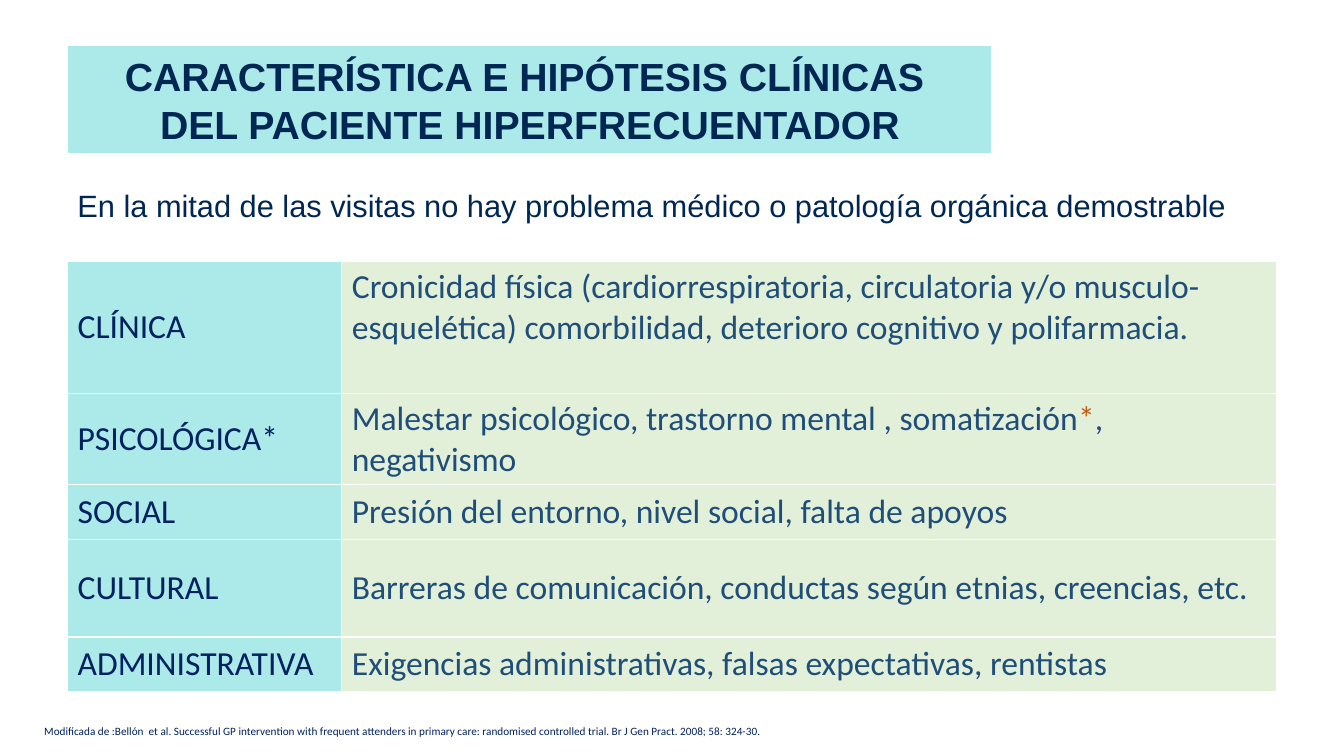
"""Build the slide on clinical traits of frequent attenders."""
from lxml import etree
from pptx import Presentation
from pptx.dml.color import RGBColor
from pptx.enum.shapes import MSO_SHAPE
from pptx.enum.text import MSO_ANCHOR, PP_ALIGN
from pptx.oxml.ns import qn
from pptx.util import Inches, Pt

RECT = MSO_SHAPE.RECTANGLE
TOP, MIDDLE = MSO_ANCHOR.TOP, MSO_ANCHOR.MIDDLE
LEFT, CENTER = PP_ALIGN.LEFT, PP_ALIGN.CENTER
INK, NAVY, BLUE, RUST = "002754", "002060", "1F4E79", "C55A11"
AQUA, GREEN, WHITE = "ACEAEA", "E2F0D9", "FFFFFF"

COLS = [2.72, 9.27]
ROWS = [
    (1.31, "CLÍNICA", ["Cronicidad física (cardiorrespiratoria, circulatoria y/o "
                       "musculo-esquelética) comorbilidad, deterioro cognitivo y polifarmacia."]),
    (0.91, "PSICOLÓGICA*", ["Malestar psicológico, trastorno mental , somatización",
                            "*", ", negativismo"]),
    (0.54, "SOCIAL", ["Presión del entorno, nivel social, falta de apoyos"]),
    (0.97, "CULTURAL", ["Barreras de comunicación, conductas según etnias, creencias, etc."]),
    (0.54, "ADMINISTRATIVA", ["Exigencias administrativas, falsas expectativas, rentistas"]),
]


def color(code):
    return RGBColor.from_string(code)


class Page:
    def __init__(self, slide):
        self.slide = slide
        self.head, self.body = "Arial", "Calibri"

    def style(self, run, font, size, ink, bold=False):
        run.font.name, run.font.size, run.font.bold = font, Pt(size), bold
        run.font.color.rgb = color(ink)

    def fill_in(self, frame, text, font, size, ink, bold=False, align=LEFT):
        frame.word_wrap = True
        frame.vertical_anchor = MIDDLE
        frame.text = text
        for para in frame.paragraphs:
            para.alignment = align
            for run in para.runs:
                self.style(run, font, size, ink, bold)

    def text(self, box, text, font, size, ink):
        frame = self.slide.shapes.add_textbox(*map(Inches, box)).text_frame
        self.fill_in(frame, text, font, size, ink)
        return frame

    def banner(self, box, text):
        shape = self.slide.shapes.add_shape(RECT, *map(Inches, box))
        shape.shadow.inherit = False
        shape.fill.solid()
        shape.fill.fore_color.rgb = color(AQUA)
        shape.line.color.rgb = color(WHITE)
        shape.line.width = Pt(1)
        self.fill_in(shape.text_frame, text, self.head, 28, INK, True, CENTER)

    def cell(self, cell, parts, ink, fill, anchor=MIDDLE):
        cell.vertical_anchor = anchor
        para = cell.text_frame.paragraphs[0]
        for part in parts:
            run = para.add_run()
            run.text = part
            self.style(run, self.body, 24, RUST if part == "*" else ink)
        props = cell._tc.get_or_add_tcPr()
        for side in ("a:lnL", "a:lnR", "a:lnT", "a:lnB"):
            line = etree.SubElement(props, qn(side), w=str(Pt(1)))
            solid = etree.SubElement(line, qn("a:solidFill"))
            etree.SubElement(solid, qn("a:srgbClr"), val=WHITE)
        cell.fill.solid()
        cell.fill.fore_color.rgb = color(fill)

    def table(self, left, top, cols, rows):
        high = sum(row[0] for row in rows)
        box = map(Inches, (left, top, sum(cols), high))
        table = self.slide.shapes.add_table(len(rows), len(cols), *box).table
        table.first_row = table.horz_banding = False
        for col, width in zip(table.columns, cols):
            col.width = Inches(width)
        for i, (height, label, parts) in enumerate(rows):
            table.rows[i].height = Inches(height)
            self.cell(table.cell(i, 0), [label], NAVY, AQUA)
            self.cell(table.cell(i, 1), parts, BLUE, GREEN, MIDDLE if i else TOP)


def main():
    deck = Presentation()
    deck.slide_width, deck.slide_height = Inches(13.33), Inches(7.5)
    page = Page(deck.slides.add_slide(deck.slide_layouts[6]))
    lead = page.text((0.67, 1.62, 12.5, 0.88), "En la mitad de las visitas no hay problema "
                     "médico o patología orgánica demostrable", page.head, 22, INK)
    lead.paragraphs[0].line_spacing = 0.9
    page.table(0.67, 2.59, COLS, ROWS)
    page.banner((0.67, 0.45, 9.17, 1.08),
                "CARACTERÍSTICA E HIPÓTESIS CLÍNICAS \nDEL PACIENTE HIPERFRECUENTADOR")
    page.text((0.34, 7.11, 12.74, 0.29), "Modificada de :Bellón  et al. Successful GP "
              "intervention with frequent attenders in primary care: randomised controlled "
              "trial. Br J Gen Pract. 2008; 58: 324-30.", page.body, 8, NAVY)
    deck.save("out.pptx")


if __name__ == "__main__":
    main()
